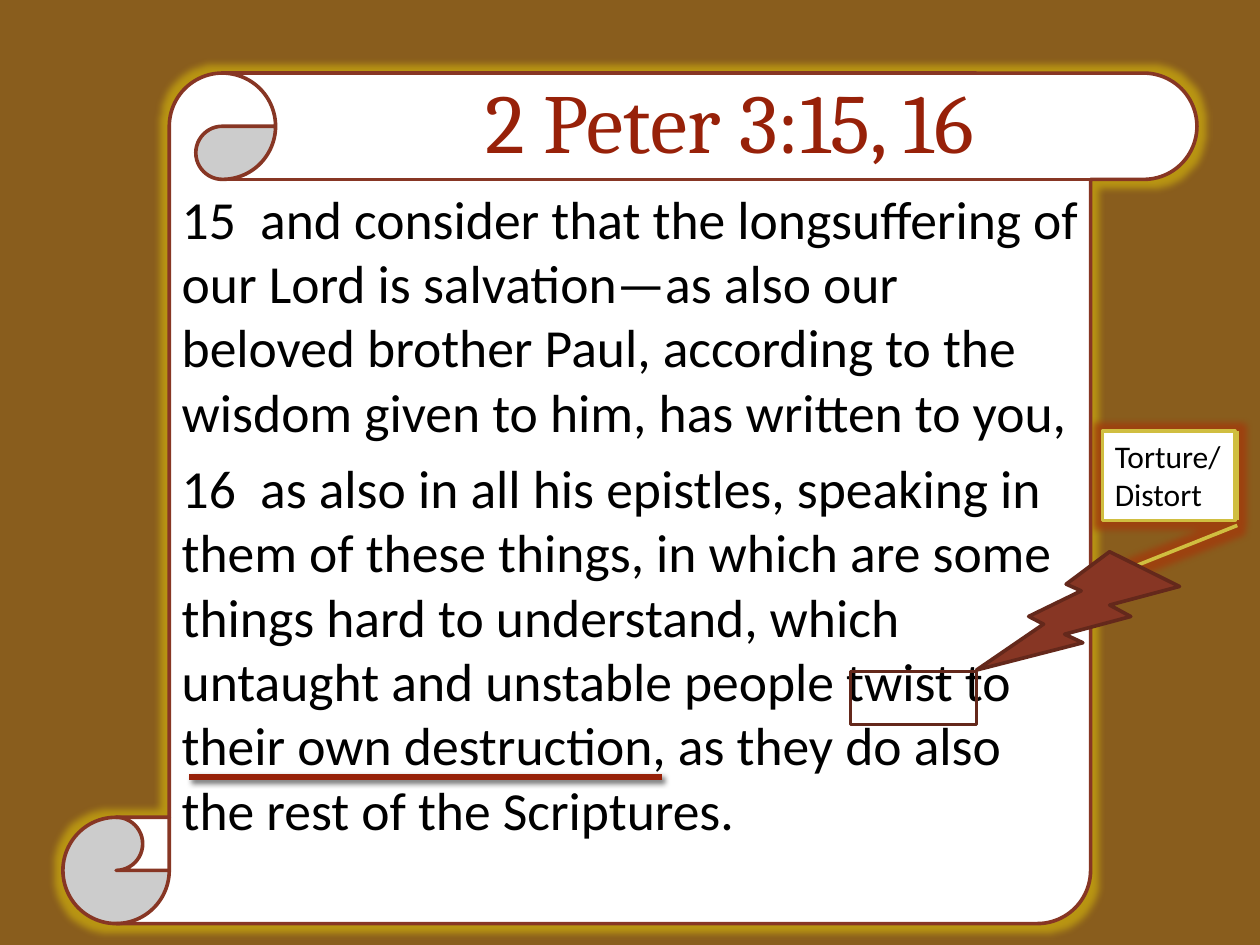
"""Build the 2 Peter 3:15, 16 scripture scroll slide."""
from dataclasses import dataclass
from typing import Optional

from lxml import etree
from pptx import Presentation
from pptx import util as u
from pptx.dml.color import RGBColor
from pptx.enum import shapes, text
from pptx.oxml import ns

SHAPE = shapes.MSO_SHAPE
VERSES = (
    "15  and consider that the longsuffering of our Lord is salvation—as also our "
    "beloved brother Paul, according to the wisdom given to him, has written to you,",
    "16  as also in all his epistles, speaking in them of these things, in which are some "
    "things hard to understand, which untaught and unstable people twist to their own "
    "destruction, as they do also the rest of the Scriptures.",
)


@dataclass
class Figure:
    kind: shapes.MSO_SHAPE
    left: float
    top: float
    width: float
    height: float
    line: str
    fill: Optional[str] = None
    glow: Optional[str] = None
    adjustments: tuple = ()
    rotation: float = 0
    flipped: bool = False


SCROLL = Figure(SHAPE.VERTICAL_SCROLL, 0.5, 0.58, 9, 6.75, "873624", "FFFFFF", "C9A80F")
WORD_FRAME = Figure(SHAPE.FLOWCHART_PROCESS, 6.75, 5.33, 1, 0.42, "64281B")
CALLOUT = Figure(SHAPE.LINE_CALLOUT_1_BORDER_AND_ACCENT_BAR, 8.75, 3.42, 1.05, 0.71,
                 "D0BE40", "FFFFFF", "A43A0C", (1.057, 1.019, 1.517, 0.237))
BOLT = Figure(SHAPE.LIGHTNING_BOLT, 7.82, 4.35, 1.5, 1.08, "64281B", "873624",
              rotation=8.2, flipped=True)


def color(value: str) -> RGBColor:
    return RGBColor.from_string(value)


def add_effect(effects, tag: str, value: str, opacity: int, **attributes: str) -> None:
    effect = etree.SubElement(effects, ns.qn(f"a:{tag}"), attributes)
    tint = etree.SubElement(effect, ns.qn("a:srgbClr"), val=value)
    etree.SubElement(tint, ns.qn("a:alpha"), val=str(opacity * 1000))


def draw_figure(page, figure: Figure):
    shape = page.shapes.add_shape(
        figure.kind, u.Inches(figure.left), u.Inches(figure.top),
        u.Inches(figure.width), u.Inches(figure.height))
    for index, value in enumerate(figure.adjustments):
        shape.adjustments[index] = value
    if figure.fill:
        shape.fill.solid()
        shape.fill.fore_color.rgb = color(figure.fill)
    else:
        shape.fill.background()
    shape.line.color.rgb = color(figure.line)
    shape.line.width = u.Pt(2.08)
    shape.rotation = figure.rotation
    if figure.flipped:
        shape._element.spPr.xfrm.set("flipH", "1")
    shape.shadow.inherit = False
    if figure.glow:
        effects = shape._element.spPr.find(ns.qn("a:effectLst"))
        add_effect(effects, "glow", figure.glow, 75, rad=str(u.Pt(8)))
    return shape


def write(box, paragraphs: tuple, font: str, size: float, ink: str,
          align=text.PP_ALIGN.LEFT, anchor=text.MSO_ANCHOR.TOP, wrap: bool = True) -> None:
    frame = box.text_frame
    frame.word_wrap = wrap
    frame.vertical_anchor = anchor
    frame.text = "\n".join(paragraphs)
    for index, para in enumerate(frame.paragraphs):
        para.alignment = align
        if index:
            para.space_before = u.Pt(7)
        for span in para.runs:
            span.font.name = font
            span.font.size = u.Pt(size)
            span.font.color.rgb = color(ink)


def draw_underline(page) -> None:
    line = page.shapes.add_connector(
        shapes.MSO_CONNECTOR.STRAIGHT, u.Inches(1.5), u.Inches(6.17),
        u.Inches(5.25), u.Inches(6.17))
    line.line.color.rgb = color("972109")
    line.line.width = u.Pt(3.5)
    effects = etree.SubElement(line._element.spPr, ns.qn("a:effectLst"))
    add_effect(effects, "outerShdw", "000000", 60, blurRad=str(u.Pt(3)),
               dist=str(u.Pt(2)), dir=str(45 * 60000))


def main() -> None:
    deck = Presentation()
    deck.slide_width, deck.slide_height = u.Inches(10), u.Inches(7.5)
    page = deck.slides.add_slide(deck.slide_layouts[6])
    page.background.fill.solid()
    page.background.fill.fore_color.rgb = color("895D1D")

    write(draw_figure(page, SCROLL), VERSES, "Calibri", 30.6, "000000")
    title = page.shapes.add_textbox(
        u.Inches(2.08), u.Inches(0.33), u.Inches(7.42), u.Inches(1.25))
    write(title, ("2 Peter 3:15, 16",), "Cambria", 48, "972109",
          text.PP_ALIGN.CENTER, text.MSO_ANCHOR.MIDDLE)
    draw_figure(page, WORD_FRAME)
    write(draw_figure(page, CALLOUT), ("Torture/\vDistort",), "Calibri", 18, "000000",
          wrap=False)
    draw_figure(page, BOLT)
    draw_underline(page)
    deck.save("out.pptx")


if __name__ == "__main__":
    main()
